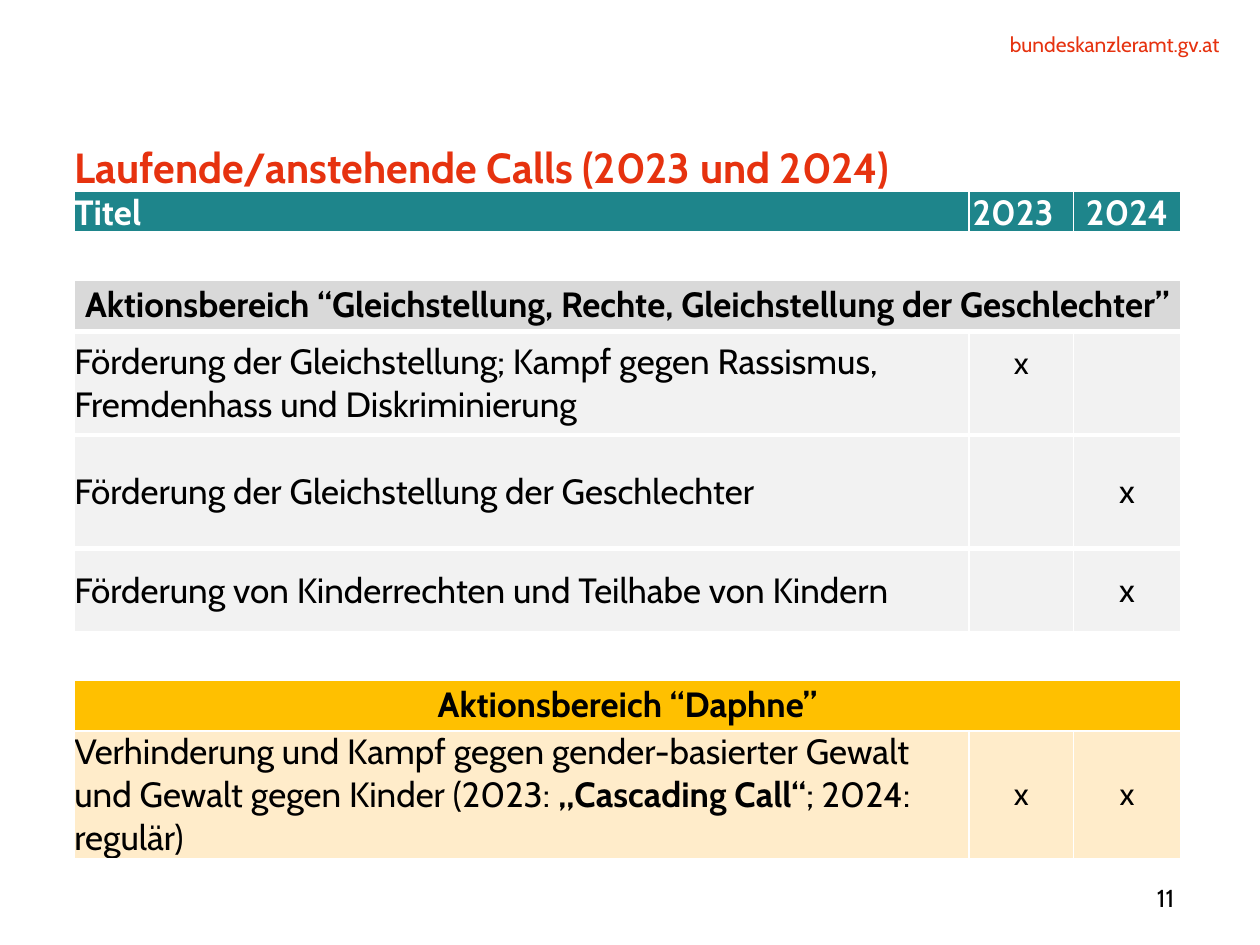
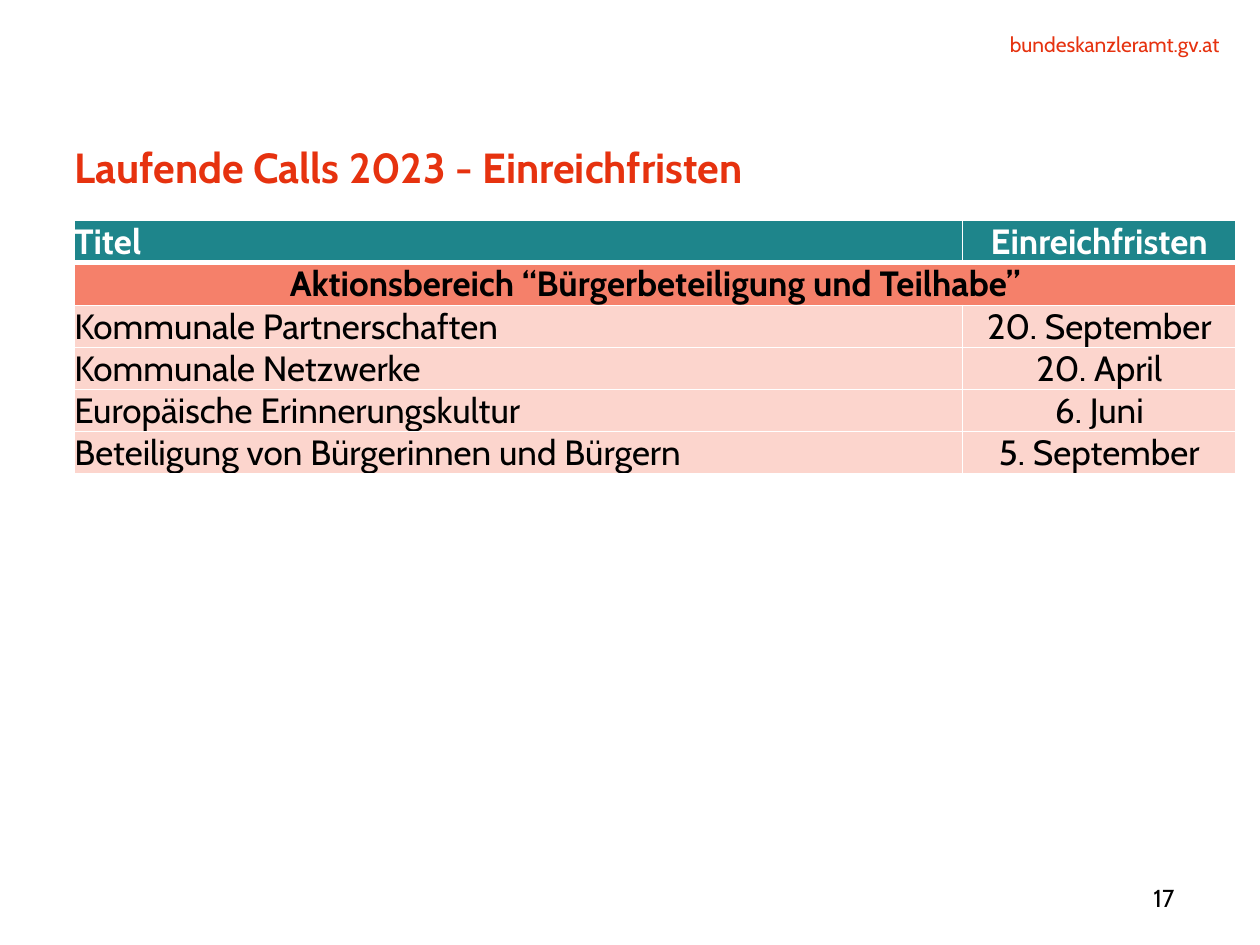
import pptx
import pptx.util
import pptx.dml.color
import pptx.enum.text
import pptx.oxml.ns
from lxml import etree

Inches = pptx.util.Inches
Pt = pptx.util.Pt
RGBColor = pptx.dml.color.RGBColor
ALIGN = pptx.enum.text.PP_ALIGN
ANCHOR = pptx.enum.text.MSO_ANCHOR
qn = pptx.oxml.ns.qn

FONT = "Cabin"
RED = RGBColor(0xE6, 0x32, 0x0F)
BLACK = RGBColor(0, 0, 0)
WHITE = RGBColor(0xFF, 0xFF, 0xFF)
TEAL = RGBColor(0x1E, 0x85, 0x8B)
GREY = RGBColor(0xD9, 0xD9, 0xD9)
PALE_GREY = RGBColor(0xF2, 0xF2, 0xF2)
AMBER = RGBColor(0xFF, 0xC0, 0x00)
PALE_AMBER = RGBColor(0xFF, 0xEC, 0xCA)
CORAL = RGBColor(0xF5, 0x80, 0x6A)
PALE_CORAL = RGBColor(0xFC, 0xD5, 0xCD)
LEFT = 0.59
THIN, THICK = 1, 3


def write(tf, text, size=20, color=BLACK, bold=False, align=ALIGN.LEFT, spacing=None):
    p = tf.paragraphs[0]
    p.alignment = align
    if spacing:
        p.line_spacing = Pt(spacing)
    runs = [(text, bold)] if isinstance(text, str) else text
    for part, part_bold in runs:
        r = p.add_run()
        r.text = part
        r.font.name = FONT
        r.font.size = Pt(size)
        r.font.bold = part_bold
        r.font.color.rgb = color


def clear_margins(box):
    box.margin_left = box.margin_top = box.margin_right = box.margin_bottom = 0


def place(sp, x, y, w, h):
    sp.left, sp.top, sp.width, sp.height = map(Inches, (x, y, w, h))


def add_label(s, text, x, y, w, h, anchor=ANCHOR.TOP, **fmt):
    tf = s.shapes.add_textbox(*map(Inches, (x, y, w, h))).text_frame
    tf.word_wrap = True
    tf.vertical_anchor = anchor
    clear_margins(tf)
    write(tf, text, align=ALIGN.RIGHT, **fmt)


def add_slide(prs, title, number):
    s = prs.slides.add_slide(prs.slide_layouts[5])
    sp = s.shapes.title
    place(sp, LEFT, 1.11, 8.73, 0.91)
    tf = sp.text_frame
    tf.word_wrap = False
    tf.auto_size = pptx.enum.text.MSO_AUTO_SIZE.NONE
    tf.vertical_anchor = ANCHOR.TOP
    clear_margins(tf)
    write(tf, title, size=24, color=RED, bold=True, spacing=30)
    add_label(s, "bundeskanzleramt.gv.at", 7.27, 0.25, 2.41, 0.2, size=12, color=RED)
    add_label(s, str(number), 8.43, 6.98, 0.89, 0.29, anchor=ANCHOR.MIDDLE, size=14)
    return s


def set_borders(cell, top, bottom):
    tcPr = cell._tc.get_or_add_tcPr()
    for side, width in (("L", THIN), ("R", THIN), ("T", top), ("B", bottom)):
        ln = etree.SubElement(tcPr, qn(f"a:ln{side}"), w=str(Pt(width)))
        fill = etree.SubElement(ln, qn("a:solidFill"))
        etree.SubElement(fill, qn("a:srgbClr"), val=str(WHITE))


def add_table(s, top, widths, heights):
    frame = s.shapes.add_table(len(heights), len(widths), Inches(LEFT), Inches(top),
                               Inches(sum(widths)), Inches(sum(heights)))
    table = frame.table
    table.first_row = table.horz_banding = False
    for column, width in zip(table.columns, widths):
        column.width = Inches(width)
    for row, height in zip(table.rows, heights):
        row.height = Inches(height)
    return table


def fill_row(table, i, texts, fill=None, top=THIN, bottom=THIN, sizes=(20, 20, 20), **fmt):
    cells = list(table.rows[i].cells)
    for j, cell in enumerate(cells):
        clear_margins(cell)
        cell.vertical_anchor = ANCHOR.MIDDLE
        set_borders(cell, top, bottom)
        if fill is None:
            cell.fill.background()
        else:
            cell.fill.solid()
            cell.fill.fore_color.rgb = fill
    if len(texts) < len(cells):
        cells[0].merge(cells[-1])
    for j, (cell, text) in enumerate(zip(cells, texts)):
        if text:
            align = ALIGN.CENTER if j or len(texts) == 1 else ALIGN.LEFT
            write(cell.text_frame, text, size=sizes[j], align=align, **fmt)


def header_row(table, texts):
    fill_row(table, 0, texts, TEAL, bottom=THICK, color=WHITE, bold=True)


def section_row(table, i, text, fill, bottom=THIN):
    fill_row(table, i, [text], fill, top=THICK, bottom=bottom, bold=True)


def calls_slide(prs):
    s = add_slide(prs, "Laufende/anstehende Calls (2023 und 2024)", 11)
    table = add_table(s, 1.52, [7.1, 0.83, 0.85],
                      [0.33, 0.36, 0.42, 0.82, 0.9, 0.67, 0.36, 0.42, 1.01])
    header_row(table, ["Titel", "2023", "2024"])
    table.cell(0, 1).margin_right = Inches(0.13)
    for spacer in (1, 6):
        fill_row(table, spacer, [""], top=THICK, bottom=THICK)
    section_row(table, 2, "Aktionsbereich “Gleichstellung, Rechte, Gleichstellung der Geschlechter”",
                GREY, bottom=THICK)
    equality_calls = [
        ("Förderung der Gleichstellung; Kampf gegen Rassismus, Fremdenhass und Diskriminierung", "x", ""),
        ("Förderung der Gleichstellung der Geschlechter", "", "x"),
        ("Förderung von Kinderrechten und Teilhabe von Kindern", "", "x"),
    ]
    for i, texts in enumerate(equality_calls, 3):
        fill_row(table, i, texts, PALE_GREY, top=THICK, bottom=THICK, sizes=(20, 18, 19))
    raised = table.cell(3, 1)
    raised.vertical_anchor = ANCHOR.TOP
    raised.margin_top = Inches(0.1)
    section_row(table, 7, "Aktionsbereich “Daphne”", AMBER)
    daphne = [
        ("Verhinderung und Kampf gegen gender-basierter Gewalt und Gewalt gegen Kinder (2023: ", False),
        ("„Cascading Call“", True),
        ("; 2024: regulär)", False),
    ]
    fill_row(table, 8, [daphne, "x", "x"], PALE_AMBER, sizes=(20, 18, 18))


def deadlines_slide(prs):
    s = add_slide(prs, "Laufende Calls 2023 - Einreichfristen", 17)
    deadlines = [
        ("Kommunale Partnerschaften", "20. September"),
        ("Kommunale Netzwerke", "20. April"),
        ("Europäische Erinnerungskultur", "6. Juni"),
        ("Beteiligung von Bürgerinnen und Bürgern", "5. September"),
    ]
    table = add_table(s, 1.75, [7.05, 2.17], [0.33, 0.34] + [0.33] * len(deadlines))
    header_row(table, ["Titel", "Einreichfristen"])
    section_row(table, 1, "Aktionsbereich “Bürgerbeteiligung und Teilhabe”", CORAL)
    for i, texts in enumerate(deadlines, 2):
        fill_row(table, i, texts, PALE_CORAL)
        table.cell(i, 1).vertical_anchor = ANCHOR.BOTTOM


def main():
    prs = pptx.Presentation()
    prs.slide_width, prs.slide_height = Inches(10), Inches(7.5)
    calls_slide(prs)
    deadlines_slide(prs)
    prs.save("out.pptx")


if __name__ == "__main__":
    main()
